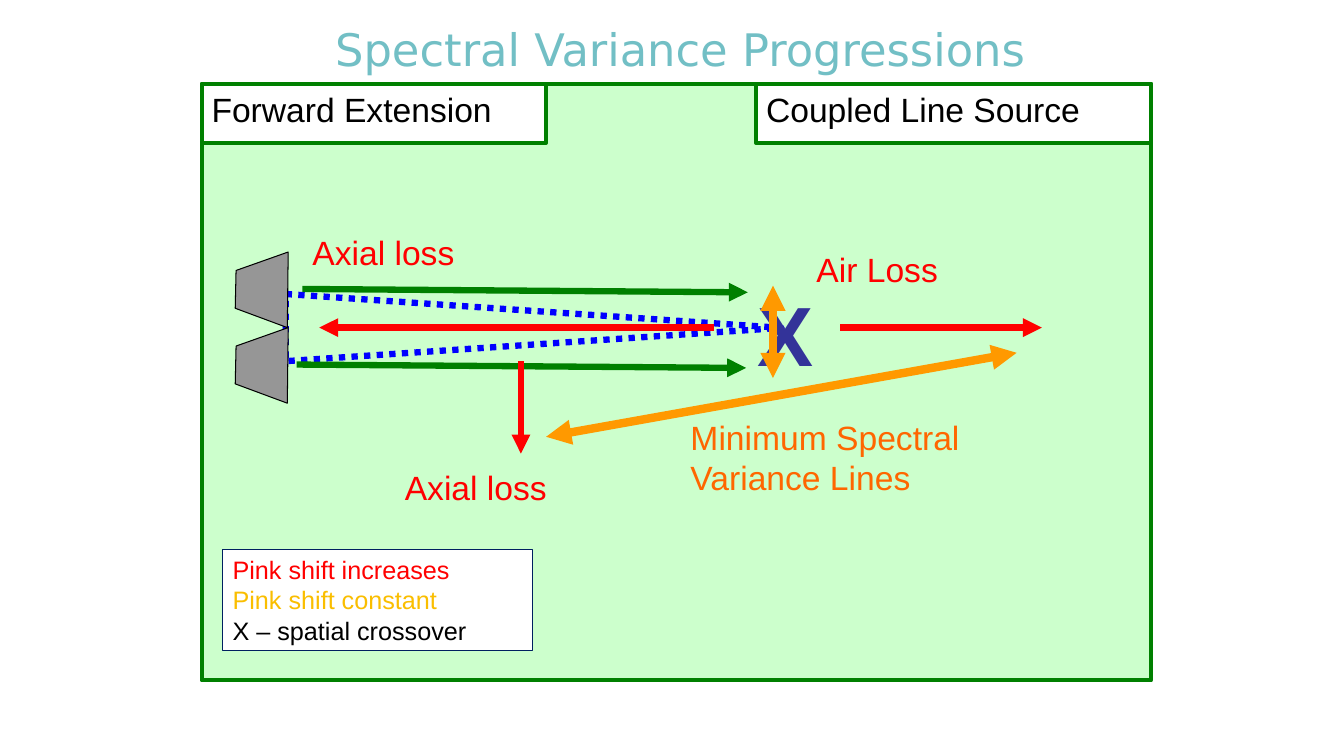
"""Builds the slide on spectral variance progressions on a grid of 160 by 90 cells."""
from lxml import etree
from pptx import Presentation
from pptx.dml.color import RGBColor
from pptx.enum.dml import MSO_LINE
from pptx.enum.shapes import MSO_CONNECTOR, MSO_SHAPE
from pptx.enum.text import MSO_ANCHOR, PP_ALIGN
from pptx.oxml.ns import qn
from pptx.util import Inches, Pt

RECT = MSO_SHAPE.RECTANGLE
WEDGE = MSO_SHAPE.ISOSCELES_TRIANGLE
LINE = MSO_CONNECTOR.STRAIGHT
DOTS = MSO_LINE.ROUND_DOT
LEFT, MID = PP_ALIGN.LEFT, PP_ALIGN.CENTER
TOP, HALF = MSO_ANCHOR.TOP, MSO_ANCHOR.MIDDLE

WHITE = RGBColor(0xFF, 0xFF, 0xFF)
BLACK = RGBColor(0, 0, 0)
MINT = RGBColor(0xCC, 0xFF, 0xCC)
GREEN = RGBColor(0, 0x80, 0)
RED = RGBColor(0xFF, 0, 0)
BLUE = RGBColor(0, 0, 0xFF)
NAVY = RGBColor(0, 0x20, 0x60)
INDIGO = RGBColor(0x33, 0x33, 0x99)
AMBER = RGBColor(0xFF, 0x99, 0)
ORANGE = RGBColor(0xFF, 0x66, 0)
GOLD = RGBColor(0xFA, 0xBE, 0)
GREY = RGBColor(0x96, 0x96, 0x96)
TEAL = RGBColor(0x72, 0xBF, 0xC5)

deck = Presentation()
deck.slide_width, deck.slide_height = Inches(13.33), Inches(7.5)
UNIT = deck.slide_height / 90
slide = deck.slides.add_slide(deck.slide_layouts[6])
shapes = slide.shapes


def grid(*cells):
    return [round(cell * UNIT) for cell in cells]


def write(shape, lines, size, font="Arial", align=LEFT, anchor=TOP, bold=False):
    frame = shape.text_frame
    frame.word_wrap = True
    frame.vertical_anchor = anchor
    frame.text = "\n".join(text for text, _ in lines)
    for par, (_, color) in zip(frame.paragraphs, lines):
        par.alignment = align
        face = par.runs[0].font
        face.name, face.size, face.bold = font, Pt(size), bold
        face.color.rgb = color


title = shapes.add_textbox(*grid(30, 1.8, 102, 8))
write(title, [("Spectral Variance Progressions", TEAL)], 32, "DejaVu Sans", MID, HALF)

legend = [("Pink shift increases", RED), ("Pink shift constant", GOLD),
          ("X – spatial crossover", BLACK)]
boxes = [
    ((24, 10, 113, 71), MINT, GREEN, 3, [], 24),
    ((90, 10, 47, 7), WHITE, GREEN, 3, [("Coupled Line Source", BLACK)], 24),
    ((24, 10, 41, 7), WHITE, GREEN, 3, [("Forward Extension", BLACK)], 24),
    ((26.5, 65.4, 36.9, 12.1), WHITE, NAVY, 0.75, legend, 18),
]
for place, fill, edge, width, lines, size in boxes:
    box = shapes.add_shape(RECT, *grid(*place))
    box.shadow.inherit = False
    box.fill.solid()
    box.fill.fore_color.rgb = fill
    box.line.color.rgb = edge
    box.line.width = Pt(width)
    if lines:
        write(box, lines, size)

beam = shapes.add_shape(WEDGE, *grid(59.5, 9.5, 8, 59))
beam.rotation = 90
beam.adjustments[0] = 0.505
beam.shadow.inherit = False
beam.fill.background()
beam.line.color.rgb = BLUE
beam.line.width = Pt(4.5)
beam.line.dash_style = DOTS

cross = shapes.add_textbox(*grid(89, 33, 15.7, 7.4))
write(cross, [("X", INDIGO)], 60, bold=True)

arrows = [
    ((36, 34.4, 89, 34.8), GREEN, 4.5, ["tailEnd"]),
    ((35.3, 43.4, 88.8, 43.8), GREEN, 4.5, ["tailEnd"]),
    ((100, 39, 124, 39), RED, 4.5, ["tailEnd"]),
    ((85, 39, 38, 39), RED, 4.5, ["tailEnd"]),
    ((62, 43, 62, 54), RED, 4.5, ["tailEnd"]),
    ((121, 42, 65, 52), AMBER, 6, ["headEnd", "tailEnd"]),
    ((92, 34, 92, 45), AMBER, 6, ["headEnd", "tailEnd"]),
]
for ends, color, width, tips in arrows:
    arrow = shapes.add_connector(LINE, *grid(*ends))
    arrow.line.color.rgb = color
    arrow.line.width = Pt(width)
    for tip in tips:
        etree.SubElement(arrow.line._get_or_add_ln(), qn("a:" + tip), type="triangle")
    etree.SubElement(arrow._element.spPr, qn("a:effectLst"))

labels = [
    ("Axial loss", RED, (36, 27, 29.4, 6)),
    ("Axial loss", RED, (47, 55, 29.4, 6)),
    ("Air Loss", RED, (96, 29, 30.5, 4.6)),
    ("Minimum Spectral Variance Lines", ORANGE, (81, 49, 45, 11)),
]
for text, color, place in labels:
    write(shapes.add_textbox(*grid(*place)), [(text, color)], 24)

for drop in (0, 9):
    horn = [grid(x, y + drop) for x, y in
            ((34.2, 39), (28, 36.7), (28.1, 32.2), (34.3, 30))]
    pen = shapes.build_freeform(*horn[0])
    pen.add_line_segments(horn[1:], close=True)
    cab = pen.convert_to_shape()
    cab.shadow.inherit = False
    cab.fill.solid()
    cab.fill.fore_color.rgb = GREY
    cab.line.color.rgb = BLACK
    cab.line.width = Pt(0.75)

deck.save("out.pptx")
